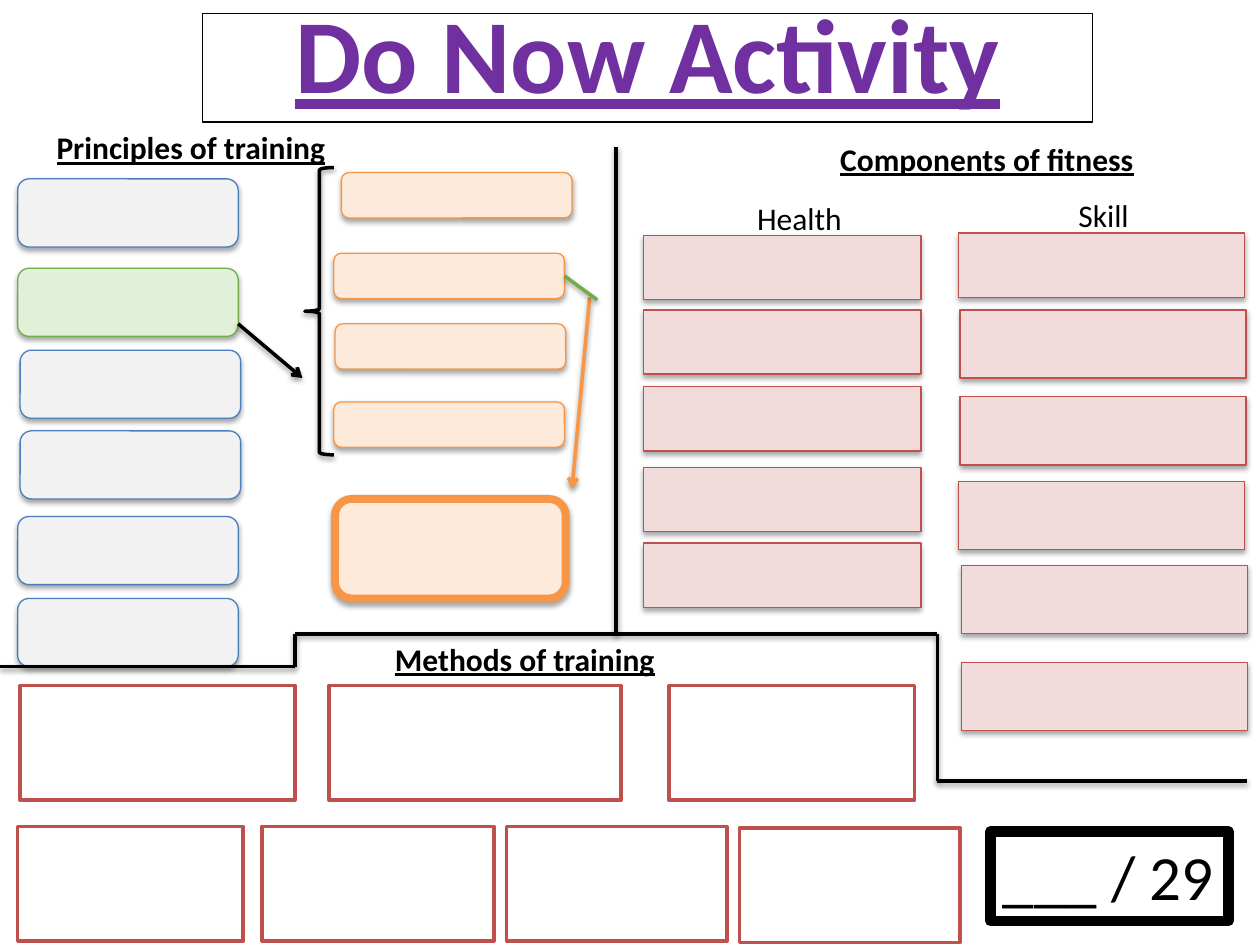
import pptx
import pptx.util
import pptx.oxml
import pptx.oxml.ns
from pptx.dml.color import RGBColor
from pptx.enum.shapes import MSO_CONNECTOR, MSO_SHAPE
from pptx.enum.text import MSO_ANCHOR, MSO_AUTO_SIZE, PP_ALIGN
from pptx.util import Inches, Pt

BLACK = RGBColor(0x00, 0x00, 0x00)
WHITE = RGBColor(0xFF, 0xFF, 0xFF)
PURPLE = RGBColor(0x70, 0x30, 0xA0)
BLUE = RGBColor(0x4B, 0x7E, 0xBC)
GREY = RGBColor(0xF2, 0xF2, 0xF2)
GREEN = RGBColor(0x70, 0xAD, 0x47)
PALE_GREEN = RGBColor(0xE2, 0xF0, 0xD9)
ORANGE = RGBColor(0xF7, 0x96, 0x46)
PALE_ORANGE = RGBColor(0xFD, 0xEA, 0xDA)
RED = RGBColor(0xC0, 0x50, 0x4D)
PALE_RED = RGBColor(0xF2, 0xDC, 0xDB)


def outline(sp, color, width, arrow=False, shadow=None):
    """Set the line; shadow is a pair of distance in points and opacity in percent."""
    sp.line.color.rgb = color
    sp.line.width = Pt(width)
    ns = pptx.oxml.ns.nsdecls("a")
    if arrow:
        sp.line._get_or_add_ln().append(
            pptx.oxml.parse_xml(f'<a:tailEnd {ns} type="arrow"/>'))
    inner = ""
    if shadow:
        distance, opacity = shadow
        inner = (f'<a:outerShdw blurRad="{Pt(3.1)}" dist="{Pt(distance)}" dir="5400000" '
                 f'rotWithShape="0"><a:srgbClr val="000000">'
                 f'<a:alpha val="{opacity * 1000}"/></a:srgbClr></a:outerShdw>')
    sp._element.spPr.append(
        pptx.oxml.parse_xml(f"<a:effectLst {ns}>{inner}</a:effectLst>"))


def add_box(shape_type, box, fill, color, width=0.75, shadow=(1.8, 35)):
    sp = s.shapes.add_shape(shape_type, *map(Inches, box))
    if fill is None:
        sp.fill.background()
    else:
        sp.fill.solid()
        sp.fill.fore_color.rgb = fill
    outline(sp, color, width, shadow=shadow)


prs = pptx.Presentation()
prs.slide_width, prs.slide_height = Inches(10), Inches(7.5)
s = prs.slides.add_slide(prs.slide_layouts[6])

# Principles of training
for i, (x, y) in enumerate([(0.14, 1.42), (0.14, 2.13), (0.16, 2.78),
                            (0.16, 3.42), (0.14, 4.1), (0.14, 4.75)]):
    fill, color = (PALE_GREEN, GREEN) if i == 1 else (GREY, BLUE)
    add_box(MSO_SHAPE.ROUNDED_RECTANGLE, (x, y, 1.75, 0.54), fill, color)

for x, y, h, width in [(2.71, 1.37, 0.36, 0.75), (2.65, 2.01, 0.36, 0.75),
                       (2.66, 2.57, 0.36, 0.75), (2.65, 3.19, 0.36, 0.75),
                       (2.66, 3.96, 0.79, 4.5)]:
    add_box(MSO_SHAPE.ROUNDED_RECTANGLE, (x, y, 1.83, h), PALE_ORANGE, ORANGE, width)

add_box(MSO_SHAPE.LEFT_BRACE, (2.42, 1.33, 0.23, 2.28), None, BLACK, 2, (1.6, 38))

# Components of fitness: health, then skill
for y in (1.87, 2.46, 3.07, 3.71, 4.31):
    add_box(MSO_SHAPE.RECTANGLE, (5.11, y, 2.2, 0.51), PALE_RED, RED)

for x, y, h in [(7.61, 1.85, 0.51), (7.62, 2.46, 0.54), (7.62, 3.15, 0.54),
                (7.61, 3.82, 0.54), (7.63, 4.49, 0.54), (7.63, 5.26, 0.54)]:
    add_box(MSO_SHAPE.RECTANGLE, (x, y, 2.27, h), PALE_RED, RED)

# Arrows and section dividers
for x1, y1, x2, y2, color, arrow in [
        (1.89, 2.57, 2.4, 3, BLACK, True),
        (4.68, 2.36, 4.54, 3.88, ORANGE, True),
        (4.48, 2.19, 4.74, 2.38, GREEN, False),
        (4.89, 1.17, 4.89, 5.03, BLACK, False),
        (7.44, 5.03, 4.89, 5.03, BLACK, False),
        (7.44, 6.2, 7.44, 5.03, BLACK, False),
        (9.9, 6.2, 7.44, 6.2, BLACK, False),
        (4.89, 5.03, 2.34, 5.03, BLACK, False),
        (2.34, 5.29, 0, 5.29, BLACK, False),
        (2.34, 5.29, 2.34, 5.03, BLACK, False)]:
    line = s.shapes.add_connector(MSO_CONNECTOR.STRAIGHT,
                                  *map(Inches, (x1, y1, x2, y2)))
    outline(line, color, 2, arrow, (1.6, 38))

# Methods of training
for x, y, w in [(0.16, 5.44, 2.18), (2.61, 5.44, 2.32), (5.31, 5.44, 1.95),
                (0.14, 6.56, 1.79), (2.08, 6.56, 1.84), (4.02, 6.56, 1.75),
                (5.87, 6.57, 1.75)]:
    add_box(MSO_SHAPE.RECTANGLE, (x, y, w, 0.91), WHITE, RED, 2, None)

# Title, headings and score: text, box, size, color, heading style, frame width
for text, box, size, color, heading, frame in [
        ("Do Now Activity", (1.61, 0.11, 7.06, 0.86), 60, PURPLE, True, 0.75),
        ("Principles of training", (0.35, 0.97, 2.38, 0.4), 18, BLACK, True, 0),
        ("Components of fitness", (6.57, 1.06, 2.56, 0.4), 18, BLACK, True, 0),
        ("Methods of training", (3.02, 5.03, 2.29, 0.4), 18, BLACK, True, 0),
        ("Health", (5.91, 1.53, 0.88, 0.4), 18, BLACK, False, 0),
        ("Skill", (8.46, 1.51, 0.61, 0.4), 18, BLACK, False, 0),
        ("___ / 29", (7.86, 6.6, 1.89, 0.71), 36, BLACK, False, 6)]:
    sp = s.shapes.add_textbox(*map(Inches, box))
    tf = sp.text_frame
    tf.text = text
    p = tf.paragraphs[0]
    p.font.name = "Calibri"
    p.font.size = Pt(size)
    p.font.color.rgb = color
    p.font.bold = p.font.underline = heading
    if frame:
        outline(sp, BLACK, frame)
    if size == 60:
        tf.word_wrap = True
        tf.vertical_anchor = MSO_ANCHOR.BOTTOM
        p.alignment = PP_ALIGN.CENTER
        p.line_spacing = 0.9
    else:
        tf.word_wrap = False
        tf.auto_size = MSO_AUTO_SIZE.SHAPE_TO_FIT_TEXT
        if text.startswith("Methods"):
            p.alignment = PP_ALIGN.CENTER

prs.save("out.pptx")
